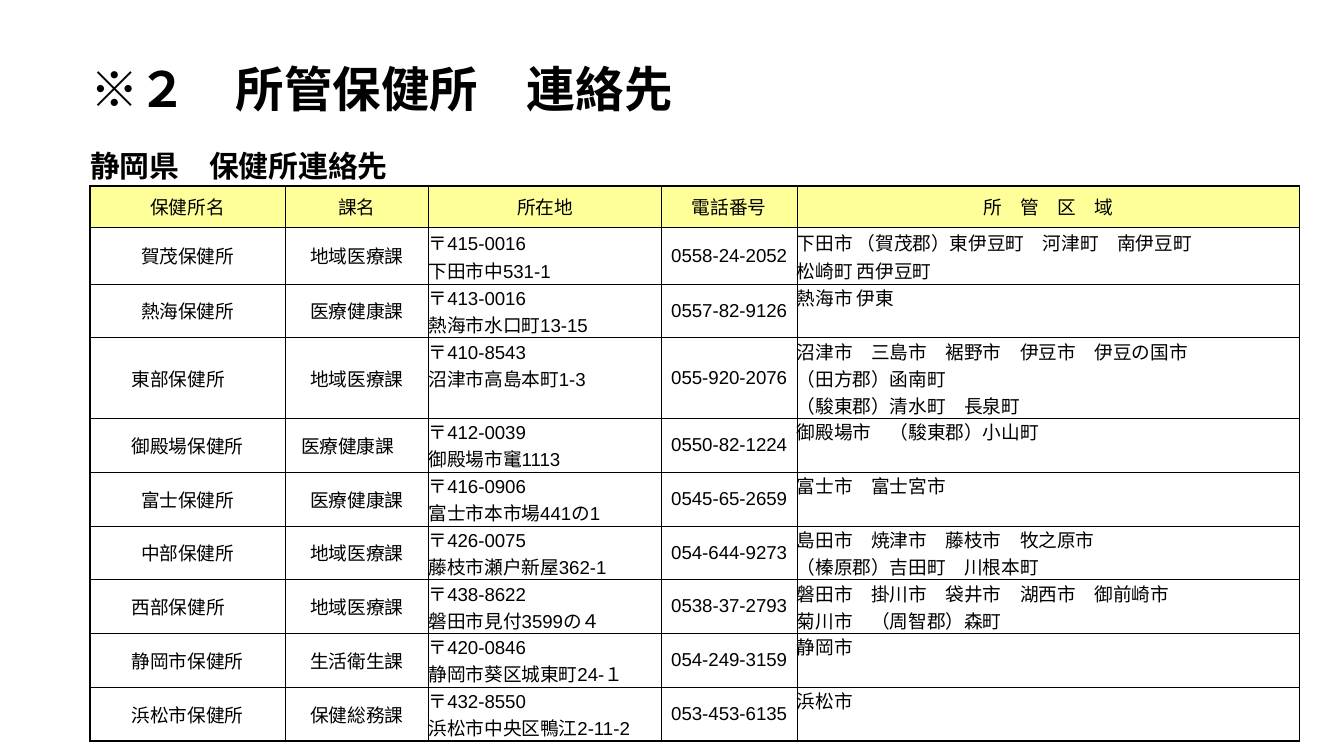
"""Build a slide listing the public health centres and their contact details."""
from lxml import etree
from pptx import Presentation
from pptx.dml.color import RGBColor
from pptx.enum import text
from pptx.oxml import ns
from pptx import util as u

BLACK = RGBColor(0x00, 0x00, 0x00)
YELLOW = RGBColor(0xFF, 0xFF, 0x99)
LATIN, JAPANESE = "Arial", "Noto Sans CJK JP"
THICK, THIN = 1, 0.5
BODY_SIZE = 10
ADDRESS, PHONE, AREA = 2, 3, 4
COLUMNS = (14.5, 10.7, 17.3, 10.1, 37.4)
CAPTION_ROW, HEADER_ROW, FIRST_ROW, BODY_ROW = 5.73, 5.53, 3.9, 3.56
HEADERS = ("保健所名", "課名", "所在地", "電話番号", "所　管　区　域")
CENTRES = (
    ("賀茂保健所", "地域医療課", ("〒415-0016", "下田市中531-1"), "0558-24-2052",
     ("下田市 （賀茂郡）東伊豆町　河津町　南伊豆町", "松崎町 西伊豆町")),
    ("熱海保健所", "医療健康課", ("〒413-0016", "熱海市水口町13-15"), "0557-82-9126",
     ("熱海市 伊東",)),
    ("東部保健所　", "地域医療課", ("〒410-8543", "沼津市高島本町1-3"), "055-920-2076",
     ("沼津市　三島市　裾野市　伊豆市　伊豆の国市", "（田方郡）函南町", "（駿東郡）清水町　長泉町")),
    ("御殿場保健所", "医療健康課　", ("〒412-0039", "御殿場市竃1113"), "0550-82-1224",
     ("御殿場市　（駿東郡）小山町",)),
    ("富士保健所", "医療健康課", ("〒416-0906", "富士市本市場441の1"), "0545-65-2659",
     ("富士市　富士宮市",)),
    ("中部保健所", "地域医療課", ("〒426-0075", "藤枝市瀬戸新屋362-1"), "054-644-9273",
     ("島田市　焼津市　藤枝市　牧之原市", "（榛原郡）吉田町　川根本町")),
    ("西部保健所　", "地域医療課", ("〒438-8622", "磐田市見付3599の４"), "0538-37-2793",
     ("磐田市　掛川市　袋井市　湖西市　御前崎市", "菊川市　（周智郡）森町")),
    ("静岡市保健所", "生活衛生課", ("〒420-0846", "静岡市葵区城東町24-１"), "054-249-3159",
     ("静岡市",)),
    ("浜松市保健所", "保健総務課", ("〒432-8550", "浜松市中央区鴨江2-11-2"), "053-453-6135",
     ("浜松市",)),
)


class Page:
    """Hold the style and the current slide; lengths are percentages of the slide."""

    def __init__(self, deck):
        self.deck = deck
        self.slide = deck.slides.add_slide(deck.slide_layouts[6])

    def across(self, share):
        return round(self.deck.slide_width * share / 100)

    def down(self, share):
        return round(self.deck.slide_height * share / 100)

    def style(self, paragraph, size, font, bold=False, centred=False):
        paragraph.alignment = text.PP_ALIGN.CENTER if centred else text.PP_ALIGN.LEFT
        for span in paragraph.runs:
            span.font.size, span.font.name, span.font.bold = u.Pt(size), font, bold
            span.font.color.rgb = BLACK
            etree.SubElement(span.font._element, ns.qn("a:ea"), typeface=JAPANESE)
        if not paragraph.runs:
            etree.SubElement(paragraph._p, ns.qn("a:endParaRPr"), sz=str(size * 100))

    def title(self, words, left, top, width, height):
        box = self.slide.shapes.add_textbox(
            self.across(left), self.down(top), self.across(width), self.down(height))
        frame = box.text_frame
        frame.word_wrap = True
        frame.vertical_anchor = text.MSO_ANCHOR.MIDDLE
        frame.text = words
        self.style(frame.paragraphs[0], 26, LATIN, bold=True, centred=True)

    def table(self, left, top, columns, rows):
        table = self.slide.shapes.add_table(
            len(rows), len(columns), self.across(left), self.down(top),
            self.across(sum(columns)), self.down(sum(rows))).table
        table.first_row = table.horz_banding = False
        for column, share in zip(table.columns, columns):
            column.width = self.across(share)
        for row, share in zip(table.rows, rows):
            row.height = self.down(share)
        return table

    def cell(self, cell, words, borders, size=BODY_SIZE, font=JAPANESE,
             bold=False, centred=False, colour=None):
        cell.margin_left = cell.margin_right = cell.margin_top = cell.margin_bottom = 0
        cell.vertical_anchor = text.MSO_ANCHOR.MIDDLE
        cell.text_frame.text = words
        self.style(cell.text_frame.paragraphs[0], size, font, bold, centred)
        self.borders(cell, borders)
        if colour is None:
            cell.fill.background()
        else:
            cell.fill.solid()
            cell.fill.fore_color.rgb = colour

    def borders(self, cell, widths):
        properties = cell._tc.get_or_add_tcPr()
        for side, width in zip("LRTB", widths):
            line = etree.SubElement(properties, ns.qn(f"a:ln{side}"), w=str(u.Pt(width)))
            if width:
                fill = etree.SubElement(line, ns.qn("a:solidFill"))
                etree.SubElement(fill, ns.qn("a:srgbClr"), val=str(BLACK))
            else:
                etree.SubElement(line, ns.qn("a:noFill"))


def sides(column):
    """Return the left and right border widths of a column."""
    return THICK if column == 0 else THIN, THICK if column == AREA else THIN


def fill_centre(page, table, first, centre):
    """Write one health centre in the rows from first and return the next free row."""
    last = first + max(len(centre[ADDRESS]), len(centre[AREA])) - 1
    top = THICK if first == 2 else THIN
    bottom = THICK if last == len(table.rows) - 1 else THIN
    for column, entry in enumerate(centre):
        stacked = column in (ADDRESS, AREA)
        lines = entry if stacked else (entry,)
        font = LATIN if column in (ADDRESS, PHONE) else JAPANESE
        for row in range(first, last + 1):
            words = lines[row - first] if row - first < len(lines) else ""
            upper = top if row == first or not stacked else 0
            lower = bottom if row == last or not stacked else 0
            page.cell(table.cell(row, column), words, (*sides(column), upper, lower),
                      font=font, centred=not stacked)
        if not stacked:
            table.cell(first, column).merge(table.cell(last, column))
    return last + 1


def main():
    deck = Presentation()
    deck.slide_width = u.Inches(10)
    deck.slide_height = deck.slide_width * 9 // 16
    page = Page(deck)
    page.title("※２　所管保健所　連絡先", 1.2, 4.4, 54.4, 14.58)
    count = sum(max(len(centre[ADDRESS]), len(centre[AREA])) for centre in CENTRES)
    rows = [CAPTION_ROW, HEADER_ROW, FIRST_ROW] + [BODY_ROW] * (count - 1)
    table = page.table(6.7, 18.86, COLUMNS, rows)
    for column, header in enumerate(HEADERS):
        caption = "静岡県　保健所連絡先" if column == 0 else ""
        page.cell(table.cell(0, column), caption, (0, 0, 0, THICK), size=16, bold=True)
        page.cell(table.cell(1, column), header, (*sides(column), THICK, THICK),
                  centred=True, colour=YELLOW)
    table.cell(0, 0).merge(table.cell(0, PHONE))
    row = 2
    for centre in CENTRES:
        row = fill_centre(page, table, row, centre)
    deck.save("out.pptx")


if __name__ == "__main__":
    main()
